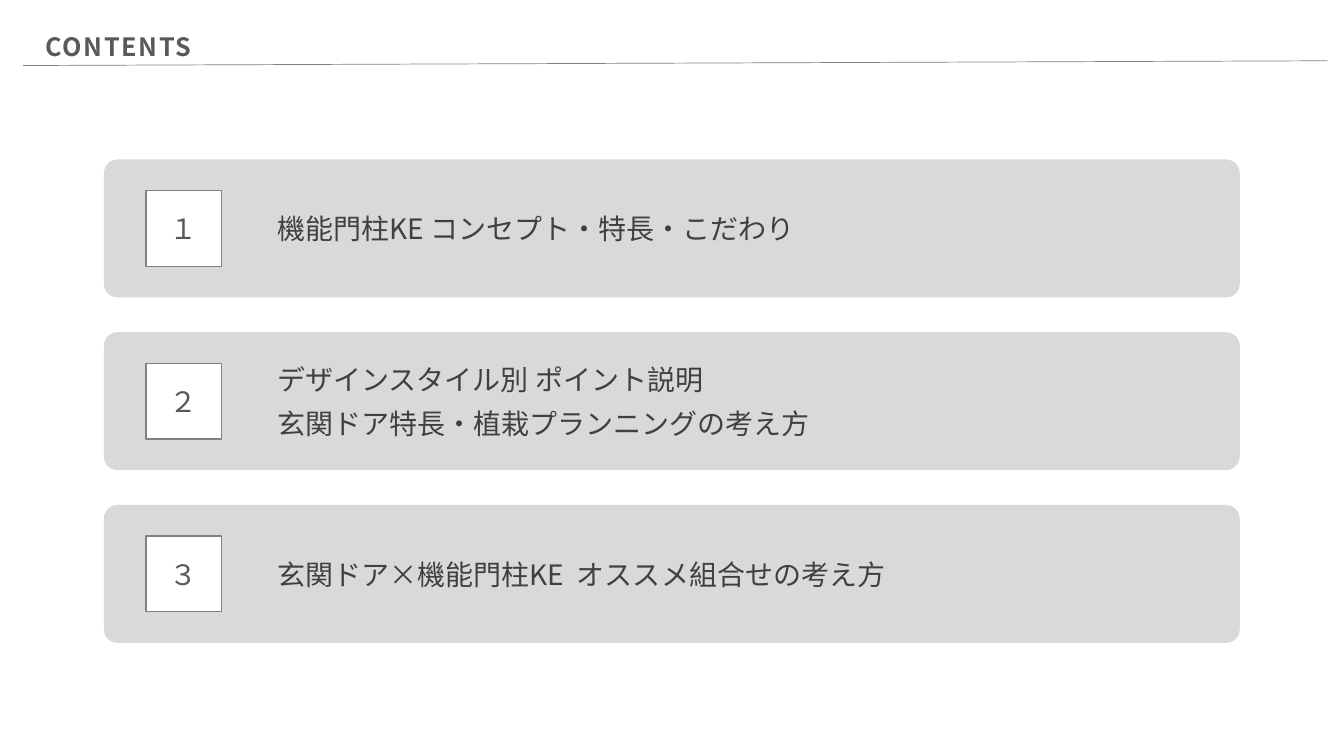
from lxml.etree import SubElement as Sub
from pptx import Presentation
from pptx.dml.color import RGBColor
from pptx.enum.shapes import MSO_CONNECTOR as Link, MSO_SHAPE as Kind
from pptx.enum.text import MSO_ANCHOR as Anchor, MSO_AUTO_SIZE as Fit, PP_ALIGN as Align
from pptx.oxml.ns import qn
from pptx.util import Pt

FONT = "Noto Sans CJK JP"
TITLE = "CONTENTS"
ITEMS = [
    ("１", ["機能門柱KE コンセプト・特長・こだわり"]),
    ("２", ["デザインスタイル別 ポイント説明", "玄関ドア特長・植栽プランニングの考え方"]),
    ("３", ["玄関ドア×機能門柱KE  オススメ組合せの考え方"]),
]
LEFT, TOP, WIDE, HIGH, STEP = 74.2, 113.9, 811.4, 98.6, 123.4
BOX, BOX_X, TEXT_X = 54, 104.2, 188


def color(code):
    return RGBColor.from_string(code)


def style(para, size, code, bold=False):
    font = para.font
    font.name, font.size, font.bold = FONT, Pt(size), bold
    font.color.rgb = color(code)
    props = para._p.get_or_add_pPr().get_or_add_defRPr()
    Sub(props, qn("a:ea"), typeface=FONT)


def panel(kind, x, y, w, h, fill, line=None):
    shape = slide.shapes.add_shape(kind, Pt(x), Pt(y), Pt(w), Pt(h))
    shape.shadow.inherit = False
    shape.fill.solid()
    shape.fill.fore_color.rgb = color(fill)
    if line:
        shape.line.color.rgb = color(line)
        shape.line.width = Pt(1)
    else:
        shape.line.fill.background()
    return shape


def heading():
    title = slide.shapes.title
    title.left, title.top, title.width, title.height = Pt(25.2), Pt(12.2), Pt(129), Pt(32.4)
    frame = title.text_frame
    frame.text = TITLE
    frame.word_wrap = False
    frame.auto_size = Fit.SHAPE_TO_FIT_TEXT
    frame.vertical_anchor = Anchor.TOP
    para = frame.paragraphs[0]
    para.alignment, para.line_spacing = Align.LEFT, 1.3
    style(para, 18, "595959", True)
    para.runs[0].font._element.set("spc", "120")

    rule = slide.shapes.add_connector(Link.STRAIGHT, Pt(16.6), Pt(46.8), Pt(948.2), Pt(43.4))
    rule.line.color.rgb = color("808080")
    rule.line.width = Pt(0.5)
    Sub(rule._element.spPr, qn("a:effectLst"))


def row(y, mark, lines):
    card = panel(Kind.ROUNDED_RECTANGLE, LEFT, y, WIDE, HIGH, "D9D9D9")
    card.adjustments[0] = 0.1

    text = slide.shapes.add_textbox(Pt(TEXT_X), Pt(y), Pt(LEFT + WIDE - TEXT_X), Pt(HIGH))
    frame = text.text_frame
    frame.word_wrap = True
    frame.vertical_anchor = Anchor.MIDDLE
    frame.margin_left = frame.margin_right = Pt(10)
    frame.margin_top = frame.margin_bottom = Pt(10)
    frame.text = "\n".join(lines)
    for para in frame.paragraphs:
        para.space_after = Pt(7)
        style(para, 20, "404040")

    box = panel(Kind.RECTANGLE, BOX_X, y + (HIGH - BOX) / 2, BOX, BOX, "FFFFFF", "808080")
    box.text_frame.text = mark
    box.text_frame.vertical_anchor = Anchor.MIDDLE
    para = box.text_frame.paragraphs[0]
    para.alignment = Align.CENTER
    style(para, 20, "595959")


deck = Presentation()
deck.slide_width, deck.slide_height = Pt(960), Pt(540)
slide = deck.slides.add_slide(deck.slide_layouts[5])
heading()
for i, (mark, lines) in enumerate(ITEMS):
    row(TOP + i * STEP, mark, lines)
deck.save("out.pptx")
